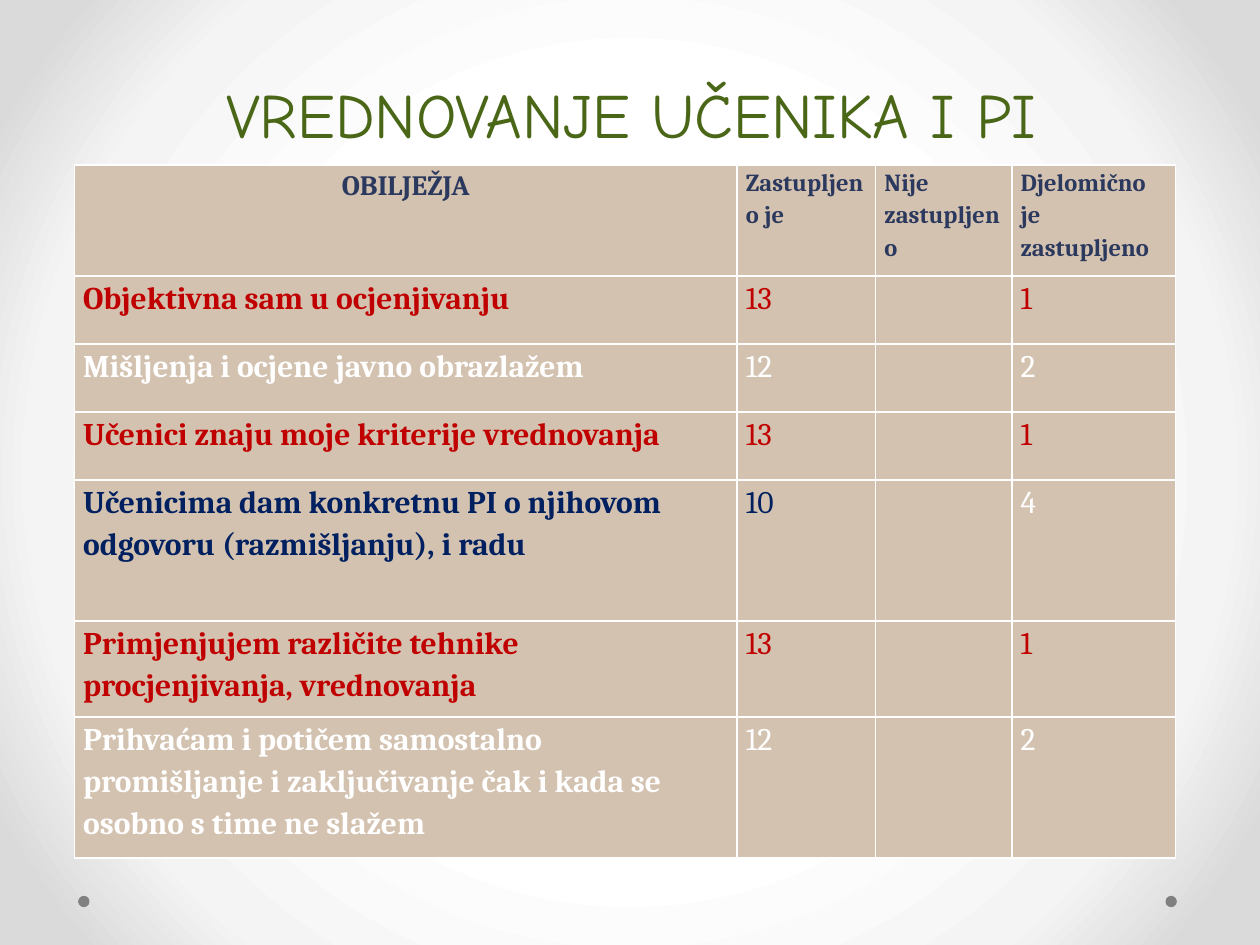
"""Build a slide with a table on how pupils are assessed."""
from lxml import etree
from pptx import Presentation
from pptx import util as u
from pptx.dml import color as c
from pptx.enum import shapes, text
from pptx.oxml import ns


def paint(value):
    return c.RGBColor.from_string(value)


def write(frame, wording, spacing, align, size, name, bold, ink):
    para = frame.paragraphs[0]
    para.line_spacing, para.alignment = spacing, align
    span = para.add_run()
    span.text = wording
    for key, value in {"size": u.Pt(size), "name": name, "bold": bold}.items():
        setattr(span.font, key, value)
    span.font.color.rgb = paint(ink)


RED, WHITE, NAVY, SLATE = "C00000", "FFFFFF", "002060", "2C395E"
LEFT, CENTER = text.PP_ALIGN.LEFT, text.PP_ALIGN.CENTER

deck = Presentation()
deck.slide_width, deck.slide_height = u.Inches(10), u.Inches(7.5)
unit = deck.slide_width // 100
page = deck.slides.add_slide(deck.slide_layouts[5])

page.background.fill.gradient()
gradient = page.element.find(".//" + ns.qn("a:gradFill"))
for child in list(gradient):
    gradient.remove(child)
stops = etree.SubElement(gradient, ns.qn("a:gsLst"))
for share, tone in ((50, WHITE), (76, "F4F4F4"), (92, "DADADA")):
    stop = etree.SubElement(stops, ns.qn("a:gs"), pos=str(share * 1000))
    etree.SubElement(stop, ns.qn("a:srgbClr"), val=tone)
circle = etree.SubElement(gradient, ns.qn("a:path"), {"path": "circle"})
etree.SubElement(circle, ns.qn("a:fillToRect"), {side: "50000" for side in "ltrb"})

for column in (92.5, 6.2):
    dot = page.shapes.add_shape(shapes.MSO_SHAPE.OVAL, int(column * unit),
                                int(71.1 * unit), int(0.9 * unit), int(0.9 * unit))
    dot.shadow.inherit = False
    dot.fill.solid()
    dot.fill.fore_color.rgb = paint("808080")
    dot.line.fill.background()

title = page.shapes.title
for key, value in {"left": 5.1, "top": 0, "width": 90, "height": 12.5}.items():
    setattr(title, key, int(value * unit))
title.text_frame.vertical_anchor = text.MSO_ANCHOR.BOTTOM
title.text_frame.word_wrap = True
write(title.text_frame, "VREDNOVANJE UČENIKA I PI", u.Pt(58), CENTER, 36,
      "Comic Neue", False, "4A6717")

headings = ("OBILJEŽJA", "Zastupljeno je", "Nije zastupljeno", "Djelomično je zastupljeno")
ratings = (
    ("Objektivna sam u ocjenjivanju", "13", "1", RED),
    ("Mišljenja i ocjene javno obrazlažem", "12", "2", WHITE),
    ("Učenici znaju moje kriterije vrednovanja", "13", "1", RED),
    ("Učenicima dam konkretnu PI o njihovom odgovoru (razmišljanju), i radu", "10", "4", NAVY),
    ("Primjenjujem različite tehnike procjenjivanja, vrednovanja", "13", "1", RED),
    ("Prihvaćam i potičem samostalno promišljanje i zaključivanje čak i kada se "
     "osobno s time ne slažem", "12", "2", WHITE),
)
rows = [[(heading, 14 if i else 16, LEFT if i else CENTER, True, SLATE)
         for i, heading in enumerate(headings)]]
for feature, present, partial, ink in ratings:
    partial_ink = WHITE if ink == NAVY else ink
    rows.append([(feature, 18, LEFT, True, ink), (present, 18, LEFT, False, ink),
                 None, (partial, 18, LEFT, False, partial_ink)])

widths = (52.6, 11, 10.8, 13)
heights = (8.8, 5.4, 5.4, 5.4, 11.2, 7.6, 11.2)
grid = page.shapes.add_table(len(heights), len(widths), int(5.9 * unit), int(13.1 * unit),
                             int(sum(widths) * unit), int(sum(heights) * unit)).table
grid.horz_banding = False
for column, width in zip(grid.columns, widths):
    column.width = int(width * unit)
for row, height, entries in zip(grid.rows, heights, rows):
    row.height = int(height * unit)
    for cell, entry in zip(row.cells, entries):
        cell.fill.solid()
        cell.fill.fore_color.rgb = paint("D4C2B0")
        for side, margin in {"left": 0.7, "top": 0, "right": 0.7, "bottom": 0}.items():
            setattr(cell, "margin_" + side, int(margin * unit))
        if entry:
            wording, size, align, bold, ink = entry
            write(cell.text_frame, wording, 1.15, align, size, "Cambria", bold, ink)

deck.save("out.pptx")
